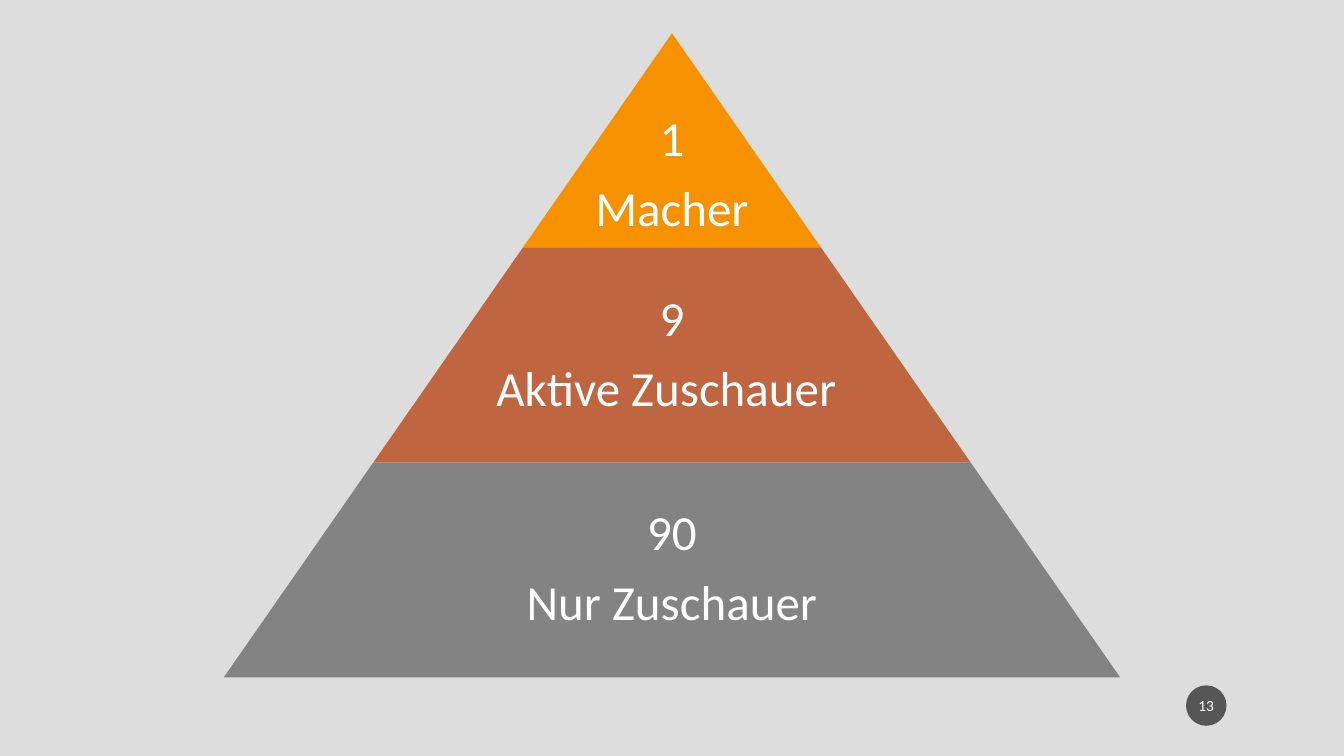
"""Build the 90-9-1 participation pyramid slide."""
from lxml import etree
from pptx import Presentation
from pptx.dml.color import RGBColor
from pptx.enum import shapes, text
from pptx.oxml.ns import qn
from pptx.util import Cm, Pt

BACKGROUND = RGBColor(0xDD, 0xDD, 0xDD)
ORANGE = RGBColor(0xF6, 0x92, 0x00)
RUST = RGBColor(0xBF, 0x65, 0x40)
GRAY = RGBColor(0x83, 0x83, 0x83)
BADGE = RGBColor(0x1D, 0x1D, 0x1D)
WHITE = RGBColor(0xFF, 0xFF, 0xFF)

SLIDE_WIDTH = 33.87
TIER_TOP = 0.84
TIER_STEP = 7.53
TIER_HEIGHT = 5.41


def write(shape, lines, size, side=0.13, top=0.13, spacing=1.0, after=0):
    """Fill a shape with centred white lines."""
    frame = shape.text_frame
    frame.word_wrap = True
    frame.vertical_anchor = text.MSO_ANCHOR.MIDDLE
    frame.margin_left = frame.margin_right = Cm(side)
    frame.margin_top, frame.margin_bottom = Cm(top), Cm(0.13)
    frame.text = "\n".join(lines)
    for paragraph in frame.paragraphs:
        paragraph.alignment = text.PP_ALIGN.CENTER
        paragraph.line_spacing = spacing
        paragraph.space_after = Pt(after)
        paragraph.font.name = "Calibri"
        paragraph.font.size = Pt(size)
        paragraph.font.color.rgb = WHITE


def add_filled(slide, kind, left, top, width, height, color):
    """Add a preset shape with a plain fill and no line."""
    shape = slide.shapes.add_shape(kind, Cm(left), Cm(top), Cm(width), Cm(height))
    shape.shadow.inherit = False
    shape.fill.solid()
    shape.fill.fore_color.rgb = color
    shape.line.fill.background()
    return shape


presentation = Presentation()
presentation.slide_width = Cm(SLIDE_WIDTH)
presentation.slide_height = Cm(19.05)
slide = presentation.slides.add_slide(presentation.slide_layouts[6])
slide.background.fill.solid()
slide.background.fill.fore_color.rgb = BACKGROUND

badge = add_filled(slide, shapes.MSO_SHAPE.OVAL, 29.89, 17.27, 1.02, 1.02, BADGE)
badge_color = badge.fill._xPr.find(qn("a:solidFill"))[0]
etree.SubElement(badge_color, qn("a:alpha")).set("val", "70000")
write(badge, ["13"], 11, side=0.05)

tiers = [
    (ORANGE, ["1", "Macher"], 1, 1.88),
    (RUST, ["9", "Aktive Zuschauer "], 0.65, 0.13),
    (GRAY, ["90", "Nur Zuschauer"], 0.65, 0.13),
]
for index, (color, lines, text_share, text_top) in enumerate(tiers):
    width = TIER_STEP * (index + 1)
    top = TIER_TOP + TIER_HEIGHT * index
    tier = add_filled(slide, shapes.MSO_SHAPE.TRAPEZOID, (SLIDE_WIDTH - width) / 2,
                      top, width, TIER_HEIGHT, color)
    tier.adjustments[0] = TIER_STEP / 2 / TIER_HEIGHT
    text_width = width * text_share
    label = slide.shapes.add_textbox(Cm((SLIDE_WIDTH - text_width) / 2), Cm(top),
                                     Cm(text_width), Cm(TIER_HEIGHT))
    write(label, lines, 35, top=text_top, spacing=0.9, after=12.25)

presentation.save("out.pptx")
